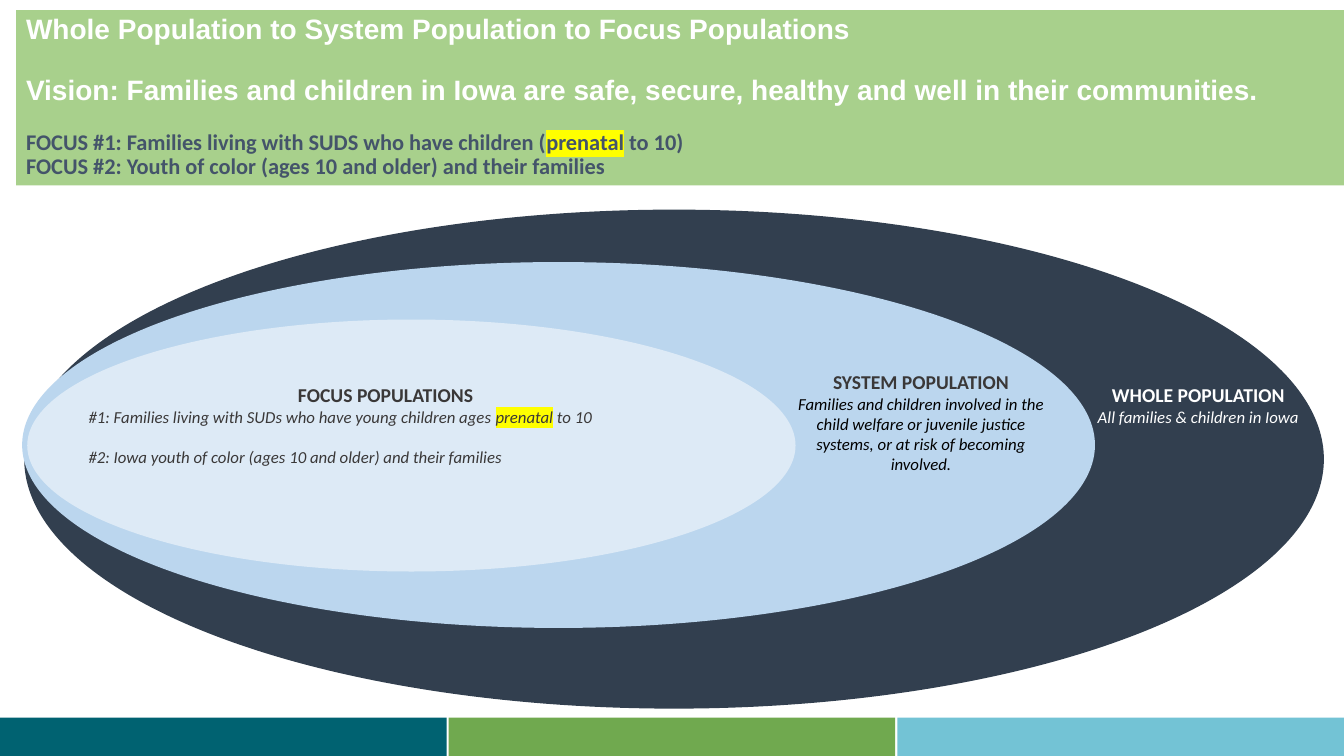
from dataclasses import dataclass

from lxml.etree import SubElement
from pptx import Presentation
from pptx.dml.color import RGBColor
from pptx.enum.shapes import MSO_SHAPE
from pptx.enum.text import MSO_ANCHOR, PP_ALIGN
from pptx.oxml.ns import qn
from pptx.util import Inches, Pt


@dataclass(frozen=True)
class Theme:
    """Colours, fonts and type sizes of the slide."""
    banner: str = "A8D08C"
    whole: str = "323F4F"
    system: str = "BBD6EE"
    focus: str = "DDEAF6"
    footer: tuple = ("006271", "70A94F", "73C3D5")
    white: str = "FFFFFF"
    black: str = "000000"
    slate: str = "44546A"
    charcoal: str = "3A3838"
    marker: str = "FFFF00"
    heading_font: str = "Arial"
    body_font: str = "Calibri"
    title_size: int = 20
    focus_size: int = 16
    label_size: int = 14
    detail_size: int = 12


@dataclass(frozen=True)
class Line:
    """One paragraph, with highlighted words between asterisks."""
    text: str
    size: int
    color: str
    font: str = Theme.body_font
    bold: bool = False
    italic: bool = False
    align: PP_ALIGN = PP_ALIGN.LEFT
    before: float = 0
    spacing: float = 1.0


class PopulationSlide:
    """Draws styled elements on the current slide."""

    def __init__(self, slide, theme):
        self.slide = slide
        self.theme = theme

    def block(self, preset, left, top, width, height, color):
        """Add a plain filled shape."""
        block = self.slide.shapes.add_shape(
            preset, Inches(left), Inches(top), Inches(width), Inches(height))
        block.shadow.inherit = False
        block.fill.solid()
        block.fill.fore_color.rgb = RGBColor.from_string(color)
        block.line.fill.background()
        return block

    def label(self, left, top, width, height, lines):
        """Add a text box holding the given lines."""
        label = self.slide.shapes.add_textbox(
            Inches(left), Inches(top), Inches(width), Inches(height))
        self.set_lines(label.text_frame, lines)

    def set_lines(self, frame, lines):
        """Fill a text frame with styled lines."""
        frame.word_wrap = True
        frame.vertical_anchor = MSO_ANCHOR.TOP
        for index, line in enumerate(lines):
            paragraph = frame.add_paragraph() if index else frame.paragraphs[0]
            paragraph.alignment = line.align
            paragraph.space_before = Pt(line.before)
            paragraph.line_spacing = line.spacing
            paragraph.font.name = line.font
            paragraph.font.size = Pt(line.size)
            paragraph.font.bold = line.bold
            paragraph.font.italic = line.italic
            paragraph.font.color.rgb = RGBColor.from_string(line.color)
            for position, words in enumerate(line.text.split("*")):
                run = paragraph.add_run()
                run.text = words
                if position % 2:
                    self.highlight(run)

    def highlight(self, run):
        """Mark a run with the highlighter colour."""
        marker = SubElement(run._r.get_or_add_rPr(), qn("a:highlight"))
        SubElement(marker, qn("a:srgbClr"), val=self.theme.marker)

    def banner(self, left, top, width, height, lines):
        """Add the heading band with its text."""
        band = self.block(MSO_SHAPE.RECTANGLE, left, top, width, height, self.theme.banner)
        self.set_lines(band.text_frame, lines)

    def footer(self, top, height, width, pitch):
        """Add the row of coloured footer bars."""
        for index, color in enumerate(self.theme.footer):
            self.block(MSO_SHAPE.RECTANGLE, index * pitch, top, width, height, color)


def main():
    """Build and save the population slide."""
    theme = Theme()
    presentation = Presentation()
    presentation.slide_width = Inches(13.33)
    presentation.slide_height = Inches(7.5)
    page = PopulationSlide(
        presentation.slides.add_slide(presentation.slide_layouts[6]), theme)

    def heading(text, before=0):
        return Line(text, theme.title_size, theme.white, theme.heading_font,
                    bold=True, before=before, spacing=0.9)

    def focus(text, before=0):
        return Line(text, theme.focus_size, theme.slate, bold=True,
                    before=before, spacing=0.9)

    def name(text, color):
        return Line(text, theme.label_size, color, bold=True, align=PP_ALIGN.CENTER)

    def detail(text, color, align=PP_ALIGN.CENTER, before=0):
        return Line(text, theme.detail_size, color, italic=True,
                    align=align, before=before)

    page.footer(top=7.12, height=0.38, width=4.43, pitch=4.45)
    page.banner(0.16, 0.1, 13.17, 1.74, [
        heading("Whole Population to System Population to Focus Populations"),
        heading("Vision: Families and children in Iowa are safe, secure, healthy "
                "and well in their communities.", before=22),
        focus("FOCUS #1: Families living with SUDS who have children (*prenatal* to 10)",
              before=18),
        focus("FOCUS #2: Youth of color (ages 10 and older) and their families"),
    ])

    for left, top, width, height, color in (
            (0.24, 2.08, 12.89, 4.95, theme.whole),
            (0.22, 2.6, 10.64, 3.63, theme.system),
            (0.27, 3.17, 7.62, 2.5, theme.focus)):
        page.block(MSO_SHAPE.OVAL, left, top, width, height, color)

    page.label(10.14, 3.75, 3.49, 0.54, [
        name("WHOLE POPULATION", theme.white),
        detail("All families & children in Iowa", theme.white),
    ])
    page.label(7.73, 3.62, 2.81, 1.14, [
        name("SYSTEM POPULATION", theme.charcoal),
        detail("Families and children involved in the child welfare or juvenile "
               "justice systems, or at risk of becoming involved.", theme.black),
    ])
    page.label(0.78, 3.75, 6.09, 0.94, [
        name("FOCUS POPULATIONS", theme.charcoal),
        detail("#1: Families living with SUDs who have young children ages "
               "*prenatal* to 10", theme.charcoal, PP_ALIGN.LEFT),
        detail("#2: Iowa youth of color (ages 10 and older) and their families",
               theme.charcoal, PP_ALIGN.LEFT, before=14.5),
    ])
    presentation.save("out.pptx")


if __name__ == "__main__":
    main()
